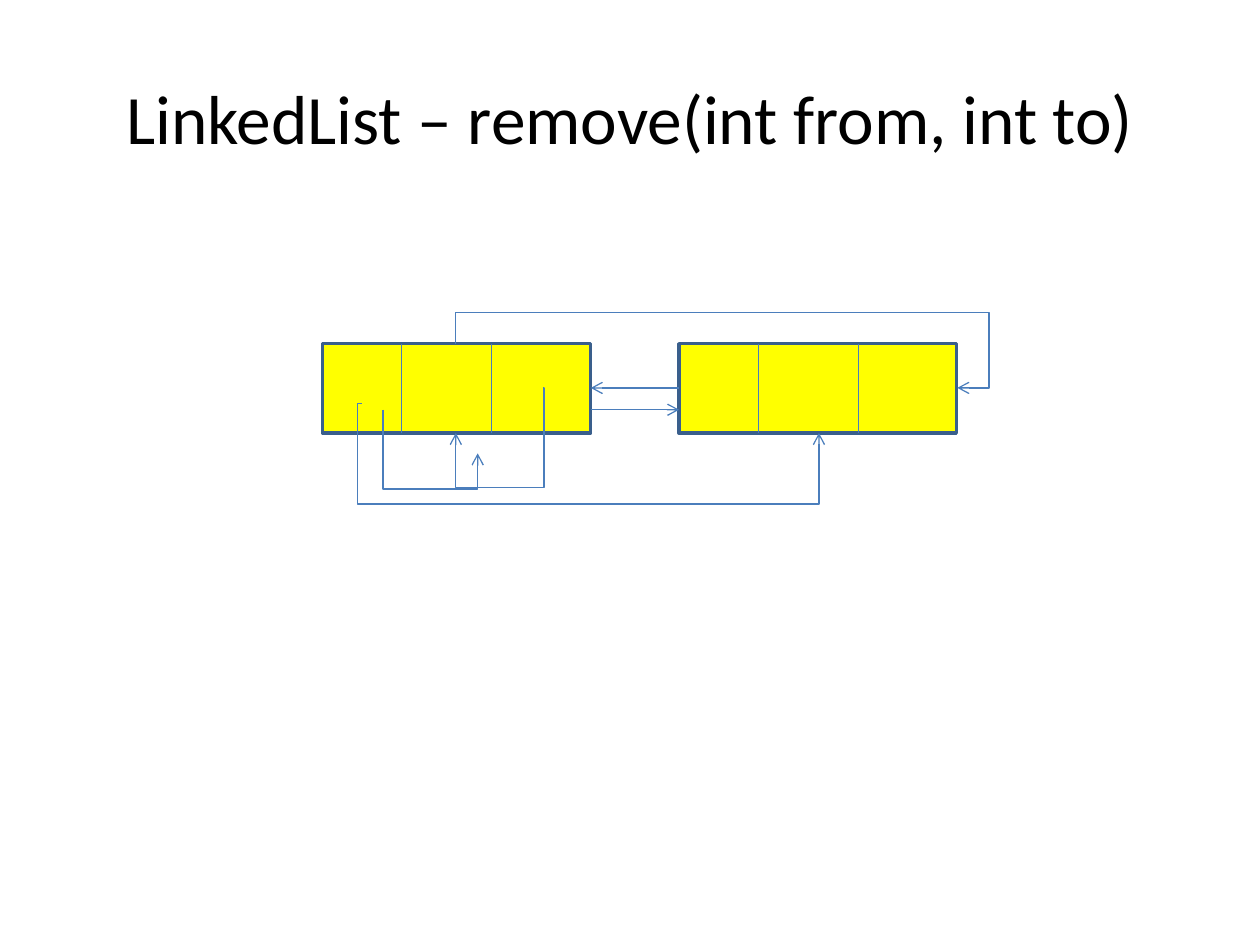
from lxml.etree import SubElement
from pptx import Presentation
from pptx.dml.color import RGBColor
from pptx.enum.shapes import MSO_CONNECTOR, MSO_SHAPE
from pptx.enum.text import MSO_ANCHOR, PP_ALIGN
from pptx.oxml.ns import qn
from pptx.util import Cm, Pt

TITLE = "LinkedList – remove(int from, int to)"
COLOURS = {"text": "000000", "node": "FFFF00", "border": "3A5F8C", "link": "4B7EBC"}
TITLE_FONT = {"name": "Calibri", "size": Pt(39.6)}
TITLE_FRAME = {"word_wrap": True, "vertical_anchor": MSO_ANCHOR.MIDDLE}

# All positions are in centimetres.
TITLE_BOX = (1.27, 0.76, 22.86, 3.18)
NODE_TOP, NODE_HEIGHT = 6.93, 1.8
NODE_BOTTOM = NODE_TOP + NODE_HEIGHT
NODES = [
    {"left": 6.5, "width": 5.41, "dividers": (8.1, 9.91)},
    {"left": 13.69, "width": 5.59, "dividers": (15.29, 17.3)},
]
# Start, first bend, end: the second bend follows from the right angles.
SIDEWAYS_LINKS = [
    ((7.29, 8.13), (7.21, 10.16), (16.51, NODE_BOTTOM)),
    ((10.95, 7.82), (10.97, 9.83), (9.19, NODE_BOTTOM)),
    ((7.72, 8.26), (7.72, 9.86), (9.63, 9.14)),
]
UPWARD_LINK = ((9.19, NODE_TOP), (19.94, 6.3), (19.3, 7.82))
STRAIGHT_LINKS = [
    ((13.69, 7.82), (11.91, 7.82)),
    ((11.91, 8.26), (13.69, 8.26)),
]


def colour(name):
    return RGBColor.from_string(COLOURS[name])


def set_all(target, values):
    for attribute, value in values.items():
        setattr(target, attribute, value)


def add_link(slide, start, end, arrow=True, kind=MSO_CONNECTOR.STRAIGHT):
    link = slide.shapes.add_connector(kind, *map(Cm, (*start, *end)))
    link.line.color.rgb = colour("link")
    link.line.width = Pt(0.75)
    properties = link._element.spPr
    if arrow:
        SubElement(properties.find(qn("a:ln")), qn("a:tailEnd"), type="arrow")
    SubElement(properties, qn("a:effectLst"))
    return link


def add_bent_link(slide, start, bend, end, upward=False):
    """Draw a three-bend link; an upward one is a sideways one turned by 270 degrees."""
    (x0, y0), (x1, y1) = start, end
    across = (bend[0] - x0) / (x1 - x0)
    down = (bend[1] - y0) / (y1 - y0)
    ratios = (across, down)
    if upward:
        ratios = (down, across)
        middle_x, middle_y = (x0 + x1) / 2, (y0 + y1) / 2
        half_x, half_y = (y1 - y0) / 2, (x1 - x0) / 2
        start = (middle_x + half_x, middle_y - half_y)
        end = (middle_x - half_x, middle_y + half_y)
    link = add_link(slide, start, end, kind=MSO_CONNECTOR.ELBOW)
    properties = link._element.spPr
    if upward:
        properties.find(qn("a:xfrm")).set("rot", str(270 * 60000))
    geometry = properties.find(qn("a:prstGeom"))
    geometry.set("prst", "bentConnector4")
    guides = geometry.find(qn("a:avLst"))
    for number, ratio in enumerate(ratios, start=1):
        SubElement(guides, qn("a:gd"), name=f"adj{number}",
                   fmla=f"val {round(ratio * 100000)}")


def add_title(slide):
    frame = slide.shapes.add_textbox(*map(Cm, TITLE_BOX)).text_frame
    set_all(frame, TITLE_FRAME)
    heading = frame.paragraphs[0]
    heading.alignment = PP_ALIGN.CENTER
    words = heading.add_run()
    words.text = TITLE
    set_all(words.font, TITLE_FONT)
    words.font.color.rgb = colour("text")


def add_node(slide, left, width, dividers):
    node = slide.shapes.add_shape(
        MSO_SHAPE.RECTANGLE, *map(Cm, (left, NODE_TOP, width, NODE_HEIGHT)))
    node.shadow.inherit = False
    node.fill.solid()
    node.fill.fore_color.rgb = colour("node")
    node.line.color.rgb = colour("border")
    node.line.width = Pt(2)
    for x in dividers:
        add_link(slide, (x, NODE_TOP), (x, NODE_BOTTOM), arrow=False)


def main():
    deck = Presentation()
    set_all(deck, {"slide_width": Cm(25.4), "slide_height": Cm(19.05)})
    slide = deck.slides.add_slide(deck.slide_layouts[6])
    add_title(slide)
    for node in NODES:
        add_node(slide, **node)
    for route in SIDEWAYS_LINKS:
        add_bent_link(slide, *route)
    add_bent_link(slide, *UPWARD_LINK, upward=True)
    for start, end in STRAIGHT_LINKS:
        add_link(slide, start, end)
    deck.save("out.pptx")


if __name__ == "__main__":
    main()
